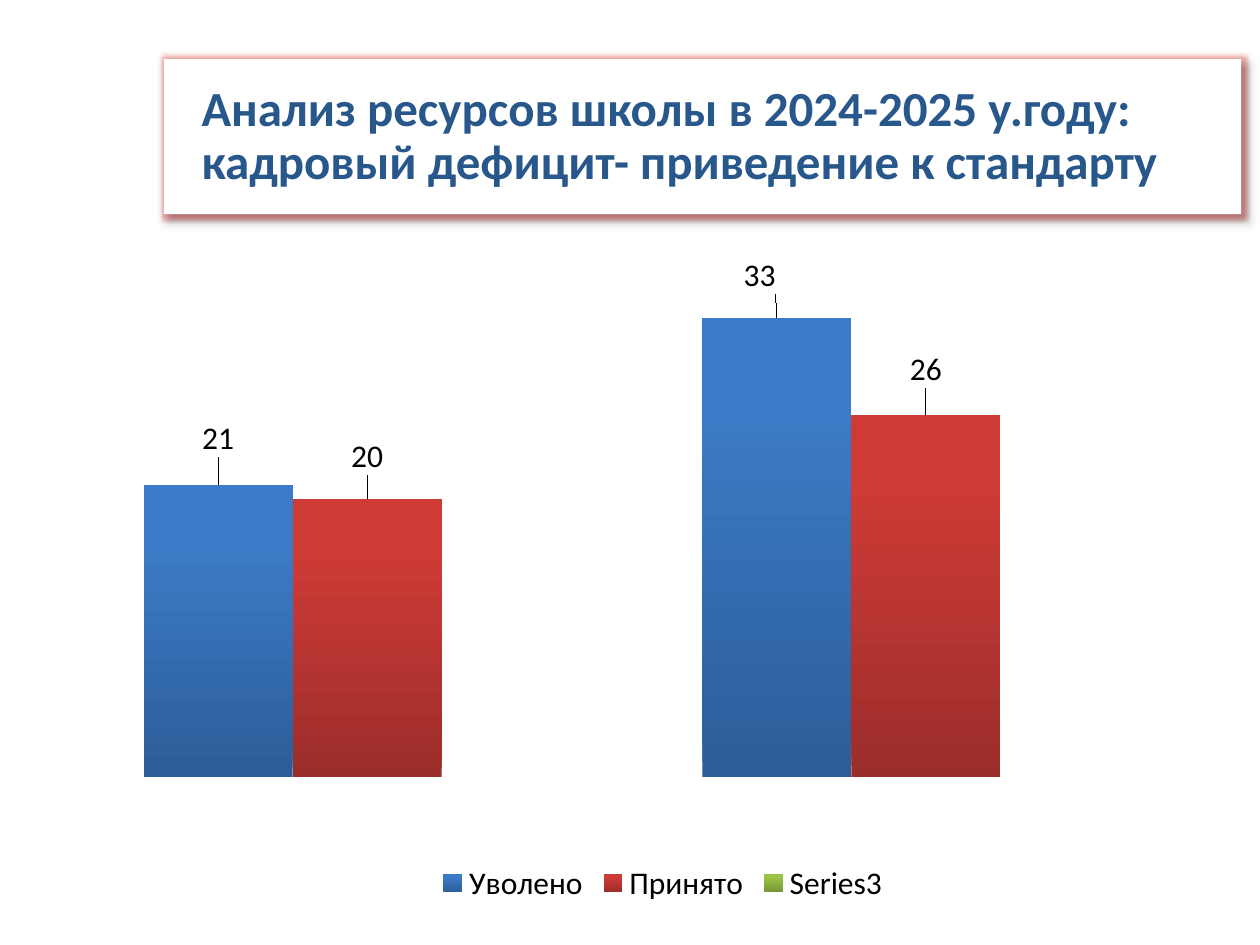
from lxml.etree import fromstring
from pptx import Presentation
from pptx.chart.data import CategoryChartData
from pptx.dml.color import RGBColor
from pptx.enum.chart import XL_CHART_TYPE, XL_LABEL_POSITION, XL_LEGEND_POSITION
from pptx.enum.text import MSO_ANCHOR, MSO_AUTO_SIZE, PP_ALIGN
from pptx.util import Inches, Pt

theme = {
    "font": "Calibri", "head": Pt(28), "body": Pt(18),
    "title": RGBColor.from_string("28578B"),
    "card": RGBColor.from_string("FFFFFF"),
    "text": RGBColor.from_string("000000"),
    "glow": "E03C3C", "shade": "000000",
}
NS = {
    "a": "http://schemas.openxmlformats.org/drawingml/2006/main",
    "c": "http://schemas.openxmlformats.org/drawingml/2006/chart",
}


def node(tag, body):
    names = " ".join(f'xmlns:{key}="{uri}"' for key, uri in NS.items())
    return fromstring(f"<{tag} {names}>{body}</{tag.split()[0]}>")


def put(item, **vals):
    for key, val in vals.items():
        setattr(item, key, val)


deck = Presentation()
put(deck, slide_width=Inches(10), slide_height=Inches(7.5))
slide = deck.slides.add_slide(deck.slide_layouts[5])

# Title card: rounded, with a red glow and a soft shadow
title = slide.shapes.title
put(title, left=Inches(1.3), top=Inches(0.47), width=Inches(8.55), height=Inches(1.23))
props = title.element.spPr
props.append(node("a:prstGeom", "<a:avLst/>"))
props[-1].set("prst", "roundRect")
title.fill.solid()
title.fill.fore_color.rgb = theme["card"]
title.line.fill.background()
props.append(node("a:effectLst", f"""
    <a:glow rad="63500"><a:srgbClr val="{theme['glow']}"><a:alpha val="40000"/></a:srgbClr></a:glow>
    <a:outerShdw blurRad="50800" dist="38100" dir="2700000" algn="tl" rotWithShape="0">
      <a:srgbClr val="{theme['shade']}"><a:alpha val="40000"/></a:srgbClr></a:outerShdw>"""))
frame = title.text_frame
frame.text = "Анализ ресурсов школы в 2024-2025 у.году: кадровый дефицит- приведение к стандарту"
put(frame, word_wrap=True, auto_size=MSO_AUTO_SIZE.NONE, vertical_anchor=MSO_ANCHOR.MIDDLE)
para = frame.paragraphs[0]
put(para, alignment=PP_ALIGN.LEFT, line_spacing=0.9)
para._p.get_or_add_pPr().set("marL", str(Inches(0.2)))
font = para.runs[0].font
put(font, name=theme["font"], size=theme["head"], bold=True)
font.color.rgb = theme["title"]

# Staff chart: name, values, dark and light fill, label shifts
staff = [
    ("Уволено", (21, 33), "2C5D98", "3C7BC7", [(0, -0.03), (-0.015, -0.025)]),
    ("Принято", (20, 26), "9B2D2A", "CE3B37", [(0, -0.025), (0, -0.03)]),
    ("Series3", (None, None), "769535", "9BC348", []),
]
data = CategoryChartData()
data.categories = ["1", "2"]
for name, vals, *_ in staff:
    data.add_series(name, vals)
chart = slide.shapes.add_chart(
    XL_CHART_TYPE.COLUMN_CLUSTERED, Inches(0.67), Inches(1.38),
    Inches(9.18), Inches(5.83), data).chart
put(chart, has_title=False, has_legend=True)
put(chart.legend, position=XL_LEGEND_POSITION.BOTTOM, include_in_layout=False)
put(chart.font, name=theme["font"], size=theme["body"])
chart.font.color.rgb = theme["text"]
put(chart.category_axis, visible=False)
put(chart.value_axis, visible=False, has_major_gridlines=False,
    minimum_scale=0, maximum_scale=35)
plot = chart.plots[0]
put(plot, gap_width=75, overlap=0, vary_by_categories=False)

# Fixed plot area
area = chart._chartSpace.chart.plotArea
for old in area.findall("c:layout", NS):
    area.remove(old)
box = {"x": 0.003, "y": 0.158, "w": 0.966, "h": 0.663}
area.insert(0, node("c:layout", '<c:manualLayout><c:layoutTarget val="inner"/>'
    '<c:xMode val="edge"/><c:yMode val="edge"/>'
    + "".join(f'<c:{key} val="{val}"/>' for key, val in box.items())
    + "</c:manualLayout>"))

# Column gradients and raised value labels
for series, (_, _, dark, light, shifts) in zip(plot.series, staff):
    fill = series.format.fill
    fill.gradient()
    fill.gradient_angle = 90
    for stop, tone, pos in zip(fill.gradient_stops, (dark, light), (0, 0.8)):
        stop.color.rgb = RGBColor.from_string(tone)
        stop.position = pos
    labels = series.data_labels
    put(labels, show_value=True, position=XL_LABEL_POSITION.OUTSIDE_END)
    for spot, (x, y) in enumerate(shifts):
        label = series.points[spot].data_label
        label.position = XL_LABEL_POSITION.OUTSIDE_END
        tag = label._dLbl
        tag.insert(1, node("c:layout", f'<c:manualLayout><c:x val="{x}"/>'
                           f'<c:y val="{y}"/></c:manualLayout>'))

deck.save("out.pptx")
